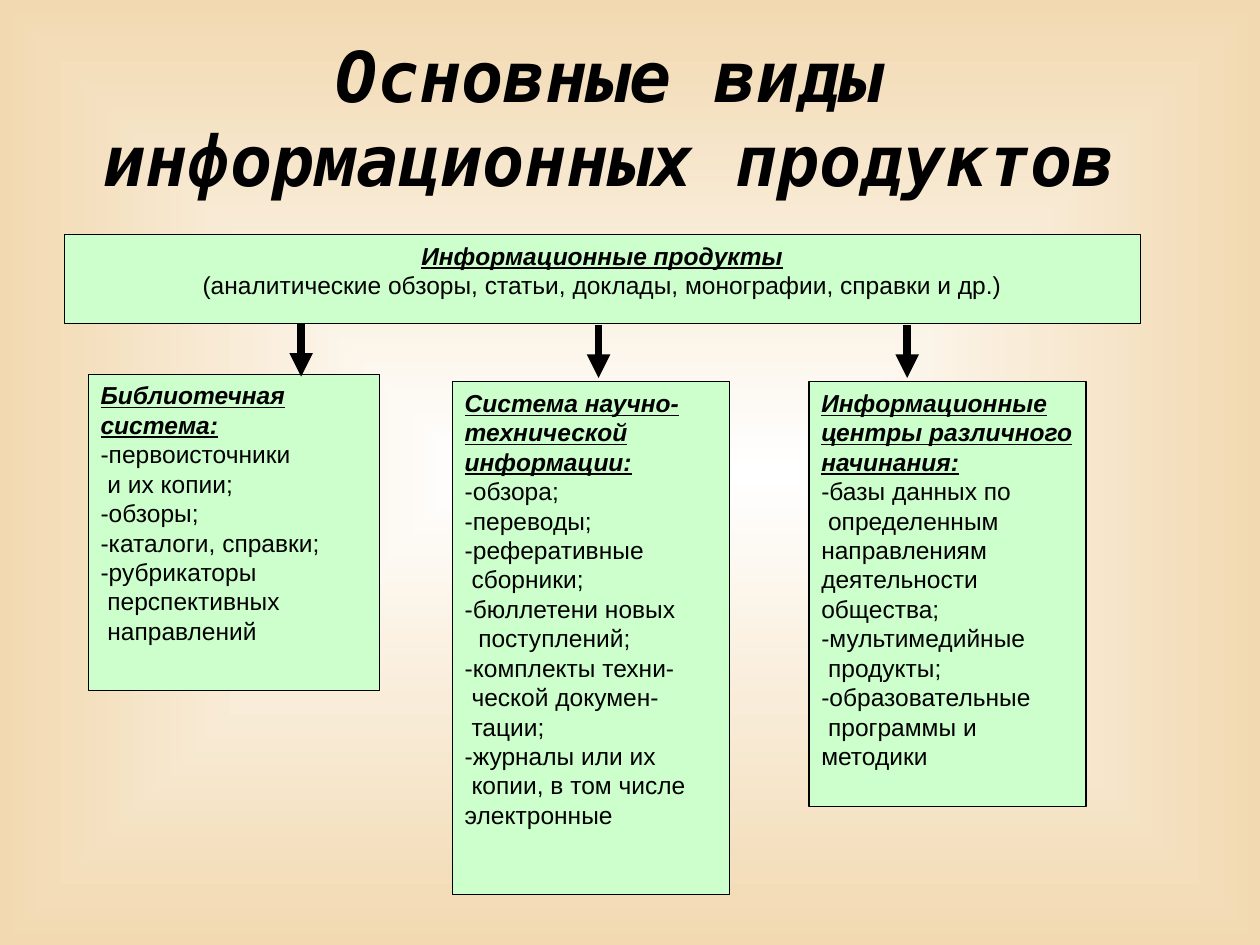
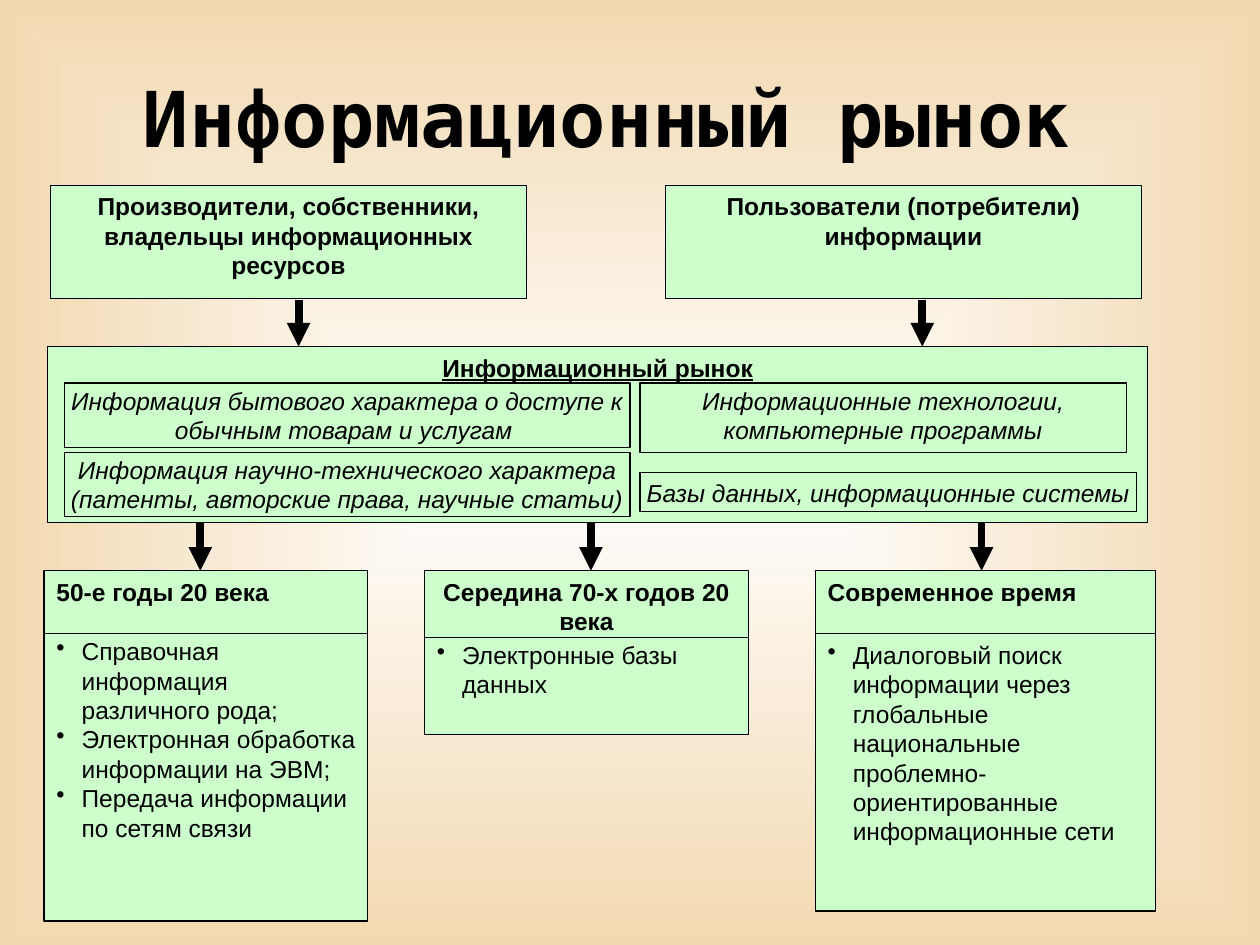
from lxml import etree
from pptx import Presentation
from pptx.dml.color import RGBColor
from pptx.enum import shapes, text
from pptx.oxml.ns import qn
from pptx.util import Inches, Pt

COLORS = {"ink": "000000", "box": "CCFFCC", "center": "FFFFFF", "edge": "F2D9B1"}
RGB = {name: RGBColor.from_string(value) for name, value in COLORS.items()}
LEFT, CENTER = text.PP_ALIGN.LEFT, text.PP_ALIGN.CENTER


def add_box(page, place, lines, style="", align=LEFT, inset=None, bullets=False):
    """Add a green box; style (b, i, u) applies to its first line only."""
    box = page.shapes.add_shape(shapes.MSO_SHAPE.RECTANGLE, *map(Inches, place))
    box.shadow.inherit = False
    box.fill.solid()
    box.fill.fore_color.rgb = RGB["box"]
    box.line.color.rgb = RGB["ink"]
    box.line.width = Pt(0.75)
    frame = box.text_frame
    frame.word_wrap = True
    frame.vertical_anchor = text.MSO_ANCHOR.TOP
    if inset is not None:
        frame.margin_left = frame.margin_right = Inches(inset)
        frame.margin_top = frame.margin_bottom = Inches(inset)
    for index, line in enumerate(lines):
        para = frame.add_paragraph() if index else frame.paragraphs[0]
        para.text = line
        para.alignment = align
        font = para.font
        font.name, font.size = "Arial", Pt(14)
        font.color.rgb = RGB["ink"]
        first_style = "" if index else style
        font.bold = "b" in first_style
        font.italic = "i" in first_style
        font.underline = "u" in first_style
        if bullets:
            props = para._p.get_or_add_pPr()
            props.set("marL", str(Inches(0.2)))
            props.set("indent", str(-Inches(0.2)))
            bullet = etree.Element(qn("a:buChar"), char="•")
            props.insert_element_before(bullet, "a:tabLst", "a:defRPr", "a:extLst")


def add_arrow(page, x, top, bottom):
    arrow = page.shapes.add_connector(
        shapes.MSO_CONNECTOR.STRAIGHT, *map(Inches, (x, top, x, bottom)))
    arrow.line.color.rgb = RGB["ink"]
    arrow.line.width = Pt(4.5)
    etree.SubElement(arrow.line._get_or_add_ln(), qn("a:tailEnd"), type="triangle")
    etree.SubElement(arrow._element.spPr, qn("a:effectLst"))


deck = Presentation()
deck.slide_width, deck.slide_height = Inches(10), Inches(7.5)

# Shared background and title
titles = [
    ("Основные виды \vинформационных продуктов ", 40, True),
    ("Информационный рынок ", 44, False),
]
pages = []
for title, size, italic in titles:
    page = deck.slides.add_slide(deck.slide_layouts[6])
    pages.append(page)
    fill = page.background.fill
    fill.gradient()
    for stop, color, position in zip(fill.gradient_stops, ("center", "edge"), (0, 1)):
        stop.color.rgb = RGB[color]
        stop.position = position
    gradient = page.background._cSld.find(".//" + qn("a:gradFill"))
    gradient.remove(gradient.find(qn("a:lin")))
    shade = etree.Element(qn("a:path"), path="shape")
    etree.SubElement(shade, qn("a:fillToRect"), l="50000", t="50000", r="50000", b="50000")
    gradient.find(qn("a:gsLst")).addnext(shade)

    box = page.shapes.add_textbox(*map(Inches, (0.5, 0.3, 9, 1.25)))
    box.text_frame.word_wrap = True
    box.text_frame.vertical_anchor = text.MSO_ANCHOR.MIDDLE
    para = box.text_frame.paragraphs[0]
    para.text = title
    para.alignment = CENTER
    para.font.name, para.font.size = "DejaVu Sans Mono", Pt(size)
    para.font.bold, para.font.italic = True, italic
    para.font.color.rgb = RGB["ink"]

products, market = pages

# Slide 1: information products and their three sources
add_box(products, (0.51, 1.86, 8.54, 0.71), [
    "Информационные продукты",
    "(аналитические обзоры, статьи, доклады, монографии, справки и др.)",
], "biu", CENTER)

sources = [
    ((0.7, 2.97, 2.31, 2.51), [
        "Библиотечная система:",
        "-первоисточники",
        " и их копии;",
        "-обзоры;",
        "-каталоги, справки;",
        "-рубрикаторы",
        " перспективных",
        " направлений",
    ]),
    ((3.59, 3.03, 2.2, 4.07), [
        "Система научно-технической информации:",
        "-обзора;",
        "-переводы;",
        "-реферативные",
        " сборники;",
        "-бюллетени новых",
        "  поступлений;",
        "-комплекты техни-",
        " ческой докумен-",
        " тации;",
        "-журналы или их",
        " копии, в том числе электронные",
    ]),
    ((6.42, 3.03, 2.2, 3.37), [
        "Информационные центры различного начинания:",
        "-базы данных по",
        " определенным направлениям деятельности общества;",
        "-мультимедийные",
        " продукты;",
        "-образовательные",
        " программы и методики",
    ]),
]
for place, lines in sources:
    add_box(products, place, lines, "biu")
for x, top in ((2.39, 2.57), (4.75, 2.58), (7.2, 2.58)):
    add_arrow(products, x, top, top + 0.42)

# Slide 2: market participants
participants = [
    (0.4, 2.37, "Производители, собственники, владельцы информационных ресурсов"),
    (5.28, 7.32, "Пользователи (потребители) информации"),
]
for left, arrow_x, name in participants:
    add_box(market, (left, 1.47, 3.78, 0.9), [name], "b", CENTER)

# Market sectors
add_box(market, (0.38, 2.75, 8.73, 1.4), ["Информационный рынок"], "bu", CENTER)
sectors = [
    ((0.51, 3.04, 4.49, 0.51), 0.02,
     "Информация бытового характера о доступе к обычным товарам и услугам "),
    ((5.08, 3.04, 3.86, 0.55), 0.02,
     "Информационные технологии, компьютерные программы"),
    ((0.51, 3.59, 4.49, 0.51), 0.02,
     "Информация научно-технического характера (патенты, авторские права, научные статьи)"),
    ((5.08, 3.75, 3.94, 0.31), 0.04,
     "Базы данных, информационные системы"),
]
for place, inset, name in sectors:
    add_box(market, place, [name], "i", CENTER, inset)
for left, arrow_x, name in participants:
    add_arrow(market, arrow_x, 2.38, 2.75)

# Periods: left, width, heading height and alignment, list top and height
periods = [
    (0.35, 2.57, 0.5, LEFT, "50-е годы 20 века", 5, 2.31, [
        "Справочная информация различного рода;",
        "Электронная обработка информации на ЭВМ;",
        "Передача информации по сетям связи",
    ]),
    (3.37, 2.57, 0.53, CENTER, "Середина 70-х годов 20 века", 5.03, 0.8, [
        "Электронные базы данных",
    ]),
    (6.47, 2.7, 0.5, LEFT, "Современное время", 5.03, 2.2, [
        "Диалоговый поиск информации через глобальные национальные "
        "проблемно-ориентированные информационные сети",
    ]),
]
for index, period in enumerate(periods):
    left, width, heading_height, align, heading, top, height, items = period
    add_box(market, (left, top, width, height), items, bullets=True)
    add_box(market, (left, 4.53, width, heading_height), [heading], "b", align)
    add_arrow(market, 1.59 + 3.1 * index, 4.15, 4.53)

deck.save("out.pptx")
